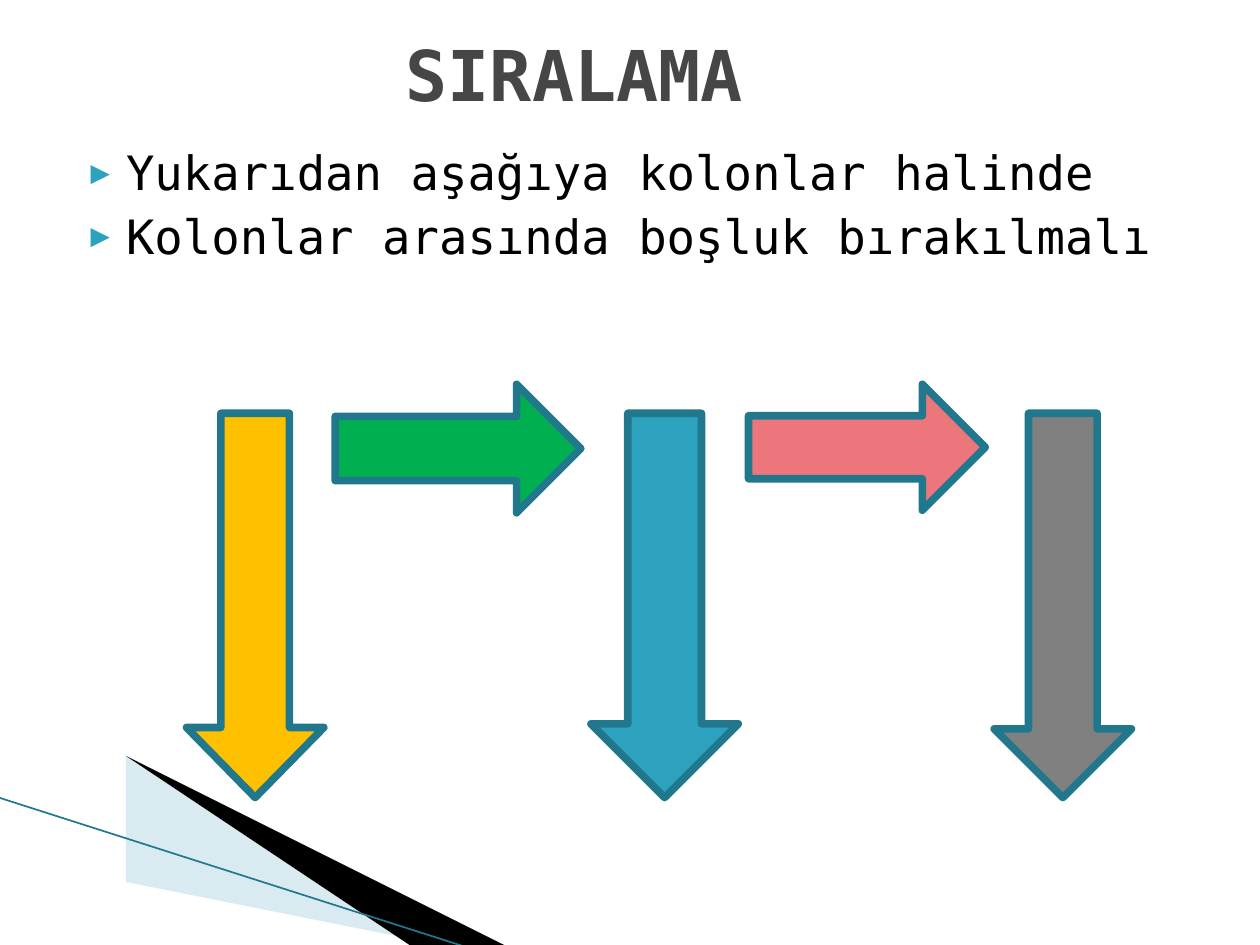
from dataclasses import dataclass

from lxml.etree import SubElement
from pptx import Presentation
from pptx.dml.color import RGBColor
from pptx.enum.shapes import MSO_CONNECTOR, MSO_SHAPE
from pptx.enum.text import MSO_ANCHOR, MSO_AUTO_SIZE, PP_ALIGN
from pptx.oxml.ns import qn
from pptx.util import Inches, Pt

FONT = "DejaVu Sans Mono"
EDGE = "21788D"
TEAL = "2DA2BF"
TITLE = {"name": FONT, "size": Pt(40), "bold": True}
BODY = {"name": FONT, "size": Pt(27), "bold": False}
LINES = ["Yukarıdan aşağıya kolonlar halinde",
         "Kolonlar arasında boşluk bırakılmalı"]


@dataclass
class Arrow:
    kind: MSO_SHAPE
    left: float
    top: float
    width: float
    height: float
    fill: str
    head: float = 0.5


@dataclass
class Wedge:
    points: list
    fill: str
    alpha: int = 100


DOWN, RIGHT = MSO_SHAPE.DOWN_ARROW, MSO_SHAPE.RIGHT_ARROW
ARROWS = [
    Arrow(DOWN, 1.48, 3.28, 1.09, 3.05, "FFC000", 0.51),
    Arrow(RIGHT, 2.66, 3.05, 1.95, 1.02, "00B050"),
    Arrow(DOWN, 4.69, 3.28, 1.17, 3.05, TEAL),
    Arrow(DOWN, 7.89, 3.28, 1.09, 3.05, "808080"),
    Arrow(RIGHT, 5.94, 3.05, 1.88, 1, "EC767C"),
]
WEDGES = [
    Wedge([(0.55, 6.51), (5.95, 7.51), (4.56, 7.51), (0.55, 6.5)], "A0CBDC", 40),
    Wedge([(0.53, 6.49), (4.57, 7.51), (3.72, 7.52), (0.54, 6.5)], "000000"),
]


def paint(color, code: str) -> None:
    color.rgb = RGBColor.from_string(code)


def fill(shape, code: str) -> None:
    shape.fill.solid()
    paint(shape.fill.fore_color, code)


def place(shape, left: float, top: float, width: float, height: float) -> None:
    shape.left, shape.top = Inches(left), Inches(top)
    shape.width, shape.height = Inches(width), Inches(height)


def write(para, text: str, look: dict, code: str) -> None:
    run = para.add_run()
    run.text = text
    for key, value in look.items():
        setattr(run.font, key, value)
    paint(run.font.color, code)


def bullet(para) -> None:
    props = para._p.get_or_add_pPr()
    props.set("marL", str(Inches(0.4)))
    props.set("indent", str(Inches(-0.28)))
    tint = SubElement(props, qn("a:buClr"))
    SubElement(tint, qn("a:srgbClr"), val=TEAL)
    SubElement(props, qn("a:buSzPct"), val="68000")
    SubElement(props, qn("a:buFont"), typeface=FONT)
    SubElement(props, qn("a:buChar"), char="▶")


def draw_wedge(slide, wedge: Wedge) -> None:
    first, *rest = wedge.points
    pen = slide.shapes.build_freeform(*first, scale=Inches(1))
    pen.add_line_segments(rest, close=True)
    shape = pen.convert_to_shape()
    shape.shadow.inherit = False
    fill(shape, wedge.fill)
    shape.line.fill.background()
    if wedge.alpha < 100:
        tint = shape._element.spPr.find(".//" + qn("a:srgbClr"))
        SubElement(tint, qn("a:alpha"), val=str(wedge.alpha * 1000))


def draw_arrow(slide, arrow: Arrow) -> None:
    shape = slide.shapes.add_shape(
        arrow.kind, Inches(arrow.left), Inches(arrow.top),
        Inches(arrow.width), Inches(arrow.height))
    shape.adjustments[1] = arrow.head
    shape.shadow.inherit = False
    fill(shape, arrow.fill)
    paint(shape.line.color, EDGE)
    shape.line.width = Pt(4.33)


def main() -> None:
    deck = Presentation()
    deck.slide_width, deck.slide_height = Inches(10), Inches(7.5)
    slide = deck.slides.add_slide(deck.slide_layouts[1])

    # Corner decoration
    for wedge in WEDGES:
        draw_wedge(slide, wedge)
    edge = slide.shapes.add_connector(
        MSO_CONNECTOR.STRAIGHT, Inches(-0.01), Inches(6.33),
        Inches(3.71), Inches(7.52))
    paint(edge.line.color, EDGE)
    edge.line.width = Pt(0.95)
    SubElement(edge._element.spPr, qn("a:effectLst"))

    # Title and list
    title, body = slide.shapes.title, slide.placeholders[1]
    place(title, 3.12, 0.3, 6.38, 0.56)
    place(body, 0.5, 1.09, 8.95, 5.48)
    for box, anchor in ((title, MSO_ANCHOR.MIDDLE), (body, MSO_ANCHOR.TOP)):
        box.text_frame.auto_size = MSO_AUTO_SIZE.NONE
        box.text_frame.vertical_anchor = anchor
    head = title.text_frame.paragraphs[0]
    head.alignment = PP_ALIGN.LEFT
    write(head, "SIRALAMA", TITLE, "464646")
    frame = body.text_frame
    for i, text in enumerate(LINES):
        para = frame.add_paragraph() if i else frame.paragraphs[0]
        bullet(para)
        para.space_before = Pt(4 if i else 0)
        write(para, text, BODY, "000000")

    # Column and step arrows
    for arrow in ARROWS:
        draw_arrow(slide, arrow)

    deck.save("out.pptx")


if __name__ == "__main__":
    main()
